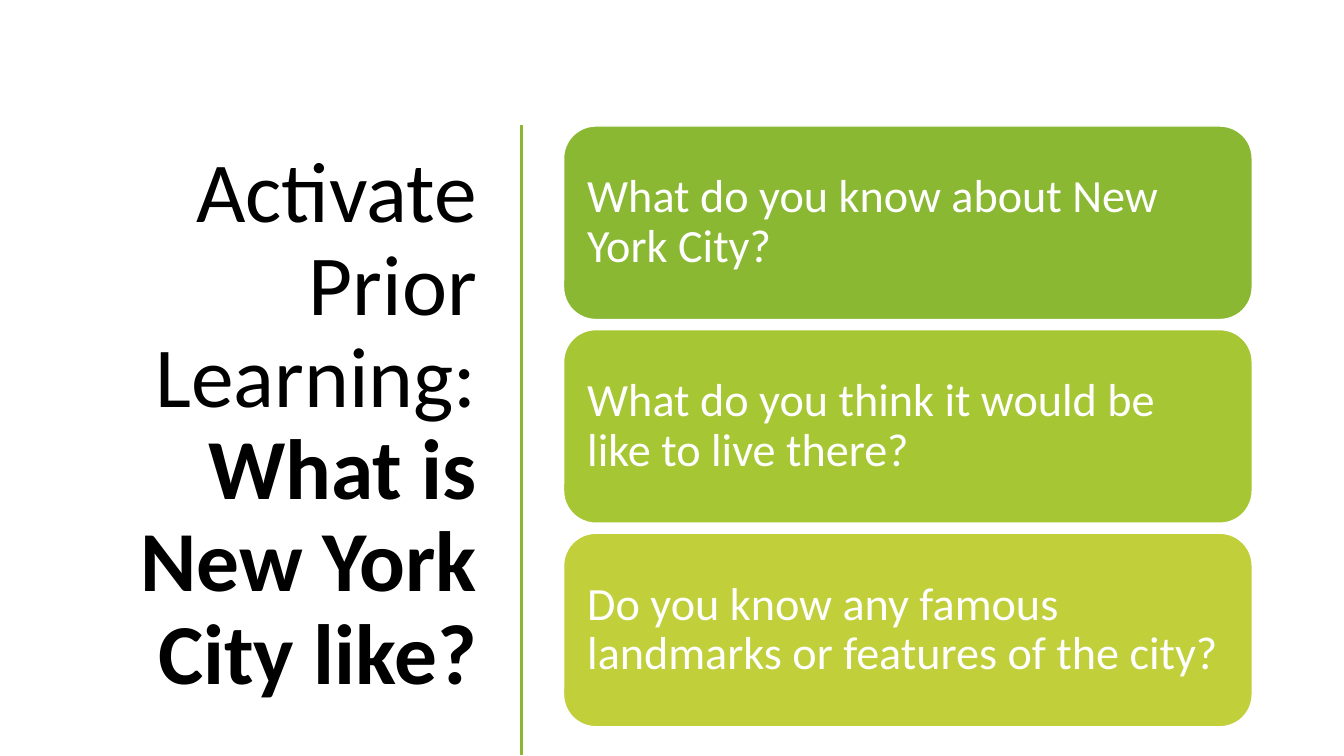
from dataclasses import dataclass

from lxml import etree
from pptx import Presentation
from pptx.dml.color import RGBColor
from pptx.enum.shapes import MSO_CONNECTOR, MSO_SHAPE
from pptx.enum.text import MSO_ANCHOR, MSO_AUTO_SIZE, PP_ALIGN
from pptx.oxml.ns import qn
from pptx.util import Inches, Pt

STRAIGHT = MSO_CONNECTOR.STRAIGHT
ROUNDED = MSO_SHAPE.ROUNDED_RECTANGLE
MIDDLE = MSO_ANCHOR.MIDDLE
LEFT, RIGHT = PP_ALIGN.LEFT, PP_ALIGN.RIGHT
NO_FIT = MSO_AUTO_SIZE.NONE


@dataclass(frozen=True)
class Theme:
    """Colours, font and type sizes of the slide."""

    font: str = "Calibri"
    title_size: int = 61
    card_size: int = 33
    ink: str = "000000"
    white: str = "FFFFFF"
    rule: str = "8AB833"
    cards: tuple = ("8AB833", "A6C634", "C0CF3A")


THEME = Theme()
TITLE = (("Activate Prior Learning:", False), ("What is New York City like?", True))
QUESTIONS = (
    "What do you know about New York City?",
    "What do you think it would be like to live there?",
    "Do you know any famous landmarks or features of the city?",
)


def apply(obj, **values):
    """Set each named attribute on an object."""
    for name, value in values.items():
        setattr(obj, name, value)


def add_run(p, text, size, color, bold=False):
    """Append a formatted run to a paragraph."""
    r = p.add_run()
    r.text = text
    apply(r.font, name=THEME.font, size=Pt(size), bold=bold)
    r.font.color.rgb = RGBColor.from_string(color)


def frame(tf, inset, align):
    """Format a text frame and return its first paragraph."""
    sides = ("margin_left", "margin_top", "margin_right", "margin_bottom")
    apply(tf, word_wrap=True, auto_size=NO_FIT, vertical_anchor=MIDDLE,
          **{side: Inches(inset) for side in sides})
    p = tf.paragraphs[0]
    apply(p, alignment=align, line_spacing=0.9)
    return p


def place_title(s, left, top, width, height):
    """Fill the title placeholder, right-aligned in its box."""
    sp = s.shapes.title
    apply(sp, left=Inches(left), top=Inches(top), width=Inches(width), height=Inches(height))
    p = frame(sp.text_frame, 0.1, RIGHT)
    for i, (text, bold) in enumerate(TITLE):
        if i:
            p.add_line_break()
        add_run(p, text, THEME.title_size, THEME.ink, bold)


def draw_rule(s, x, top, bottom):
    """Draw the vertical line between title and questions."""
    cx = s.shapes.add_connector(STRAIGHT, Inches(x), Inches(top), Inches(x), Inches(bottom))
    cx.line.color.rgb = RGBColor.from_string(THEME.rule)
    cx.line.width = Pt(2)
    etree.SubElement(cx._element.spPr, qn("a:effectLst"))


def draw_questions(s, left, top, width, height, gap=0.1):
    """Stack one rounded card per question in the box."""
    card_height = (height - gap * (len(QUESTIONS) - 1)) / len(QUESTIONS)
    for i, (text, color) in enumerate(zip(QUESTIONS, THEME.cards)):
        y = top + i * (card_height + gap)
        sp = s.shapes.add_shape(ROUNDED, Inches(left), Inches(y), Inches(width), Inches(card_height))
        sp.shadow.inherit = False
        sp.fill.solid()
        sp.fill.fore_color.rgb = RGBColor.from_string(color)
        sp.line.color.rgb = RGBColor.from_string(THEME.white)
        sp.line.width = Pt(1)
        p = frame(sp.text_frame, 0.14, LEFT)
        add_run(p, text, THEME.card_size, THEME.white)


def main():
    """Build and save the presentation."""
    prs = Presentation()
    apply(prs, slide_width=Inches(13.33), slide_height=Inches(7.5))
    s = prs.slides.add_slide(prs.slide_layouts.get_by_name("Title Only"))
    place_title(s, 0.52, 1.17, 4.31, 6.11)
    draw_rule(s, 5.17, 1.24, 7.49)
    draw_questions(s, 5.59, 1.25, 6.83, 5.96)
    prs.save("out.pptx")


if __name__ == "__main__":
    main()
